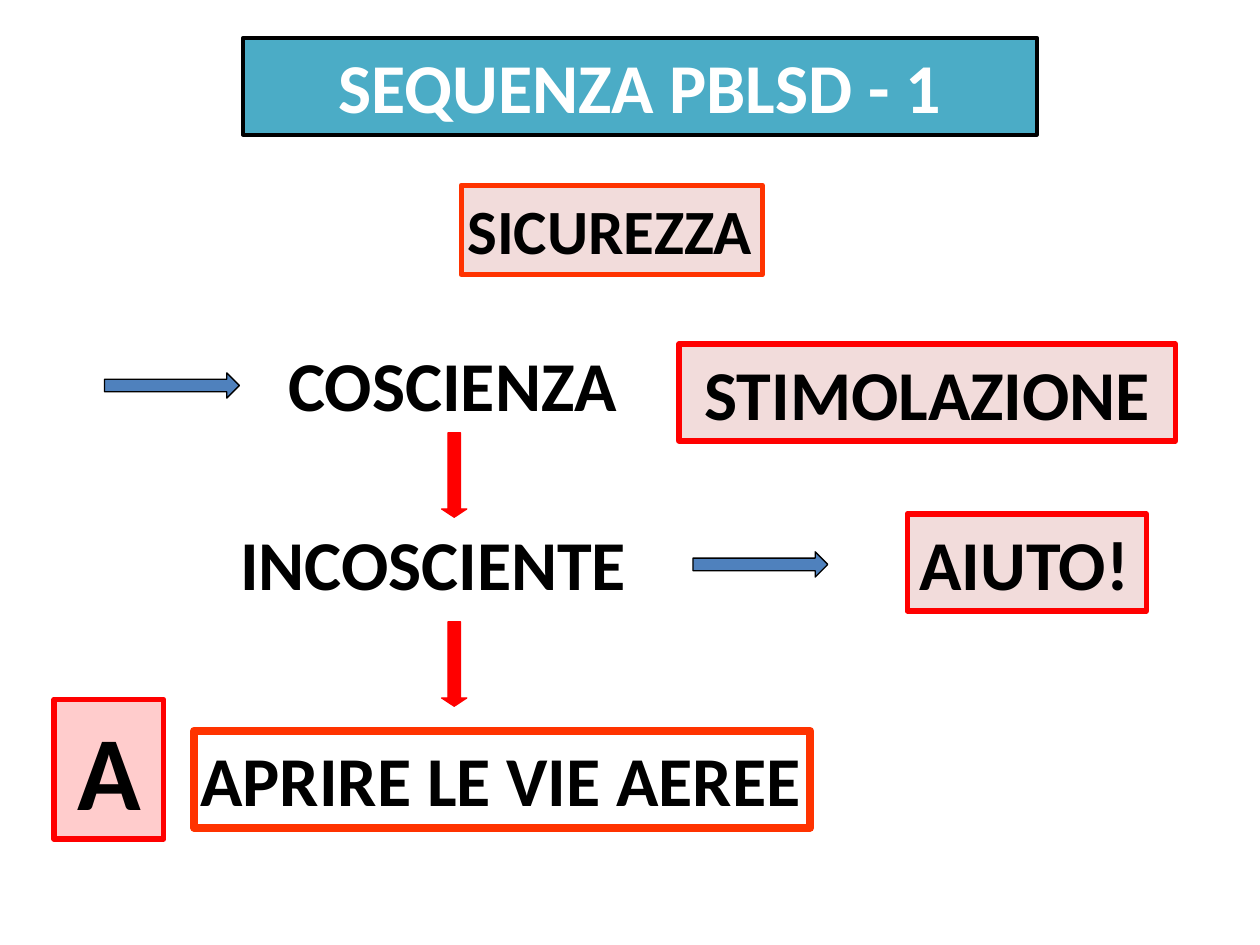
from dataclasses import dataclass

from pptx import Presentation
from pptx import util as u
from pptx.dml.color import RGBColor
from pptx.enum import shapes, text

COLUMNS, ROWS = 100, 75
SLIDE_WIDTH, SLIDE_HEIGHT = u.Inches(10), u.Inches(7.5)


@dataclass(frozen=True)
class Theme:
    font: str = "Calibri"
    ink: str = "000000"
    white: str = "FFFFFF"
    teal: str = "4BACC6"
    blue: str = "4F81BD"
    red: str = "FF0000"
    orange: str = "FF3300"
    blush: str = "F2DCDB"
    pink: str = "FFCCCC"
    safety_size: int = 36
    step_size: int = 40
    letter_size: int = 60


THEME = Theme()


def place(column, row, columns, rows):
    return (
        round(SLIDE_WIDTH * column / COLUMNS),
        round(SLIDE_HEIGHT * row / ROWS),
        round(SLIDE_WIDTH * columns / COLUMNS),
        round(SLIDE_HEIGHT * rows / ROWS),
    )


def paint(shape, fill, line, weight):
    shape.shadow.inherit = False
    if fill:
        shape.fill.solid()
        shape.fill.fore_color.rgb = RGBColor.from_string(fill)
    else:
        shape.fill.background()
    shape.line.color.rgb = RGBColor.from_string(line)
    shape.line.width = u.Pt(weight)


def write(shape, words, size=THEME.step_size, color=THEME.ink, centred=True,
          wrap=True, side_inset=0.05, spacing=None):
    frame = shape.text_frame
    frame.word_wrap = wrap
    frame.auto_size = text.MSO_AUTO_SIZE.SHAPE_TO_FIT_TEXT
    frame.vertical_anchor = text.MSO_ANCHOR.TOP
    frame.margin_left = frame.margin_right = u.Inches(side_inset)
    frame.margin_top = frame.margin_bottom = u.Inches(0.05)
    paragraph = frame.paragraphs[0]
    paragraph.text = words
    paragraph.alignment = text.PP_ALIGN.CENTER if centred else text.PP_ALIGN.LEFT
    if spacing:
        paragraph.line_spacing = spacing
    paragraph.font.name = THEME.font
    paragraph.font.size = u.Pt(size)
    paragraph.font.bold = True
    paragraph.font.color.rgb = RGBColor.from_string(color)


def add_box(slide, area, words, fill, line, weight=3, **style):
    box = slide.shapes.add_shape(shapes.MSO_SHAPE.RECTANGLE, *place(*area))
    paint(box, fill, line, weight)
    write(box, words, **style)


def add_label(slide, area, words, **style):
    write(slide.shapes.add_textbox(*place(*area)), words, **style)


def add_side_arrow(slide, column, row):
    arrow = slide.shapes.add_shape(
        shapes.MSO_SHAPE.RIGHT_ARROW, *place(column, row, 10.7, 2))
    paint(arrow, THEME.blue, THEME.ink, 0.75)


def add_down_arrow(slide, column, row):
    arrow = slide.shapes.add_shape(
        shapes.MSO_SHAPE.LEFT_ARROW, *place(column, row, 6.7, 2))
    arrow.rotation = 270
    arrow.adjustments[1] = 0.33
    paint(arrow, THEME.red, THEME.red, 0.75)


def main():
    deck = Presentation()
    deck.slide_width, deck.slide_height = SLIDE_WIDTH, SLIDE_HEIGHT
    slide = deck.slides.add_slide(deck.slide_layouts[6])

    add_box(slide, (19.3, 3, 63, 7.7), "SEQUENZA PBLSD - 1",
            THEME.teal, THEME.ink, 2.25, color=THEME.white)
    add_label(slide, (16.9, 37.5, 36.2, 10.5), "INCOSCIENTE ", spacing=1.5)
    add_down_arrow(slide, 32.7, 36.7)
    add_side_arrow(slide, 8.3, 29.6)
    add_box(slide, (36.6, 14.7, 23.9, 7.1), "SICUREZZA", THEME.blush,
            THEME.orange, size=THEME.safety_size, centred=False, wrap=False)
    add_box(slide, (4.3, 55.5, 8.7, 11.1), "A", THEME.pink, THEME.red,
            size=THEME.letter_size)
    add_label(slide, (22.4, 26.6, 28.6, 7.7), "COSCIENZA", centred=False)
    add_side_arrow(slide, 55, 43.8)
    add_down_arrow(slide, 32.7, 51.7)
    add_box(slide, (15.4, 58, 48.9, 7.7), "APRIRE LE VIE AEREE",
            None, THEME.orange, 4.5, centred=False)
    add_box(slide, (53.9, 27.3, 39.4, 7.7), "STIMOLAZIONE",
            THEME.blush, THEME.red)
    add_box(slide, (72, 40.8, 19, 7.7), "AIUTO!", THEME.blush, THEME.red,
            centred=False, wrap=False, side_inset=0.1)

    deck.save("out.pptx")


if __name__ == "__main__":
    main()
